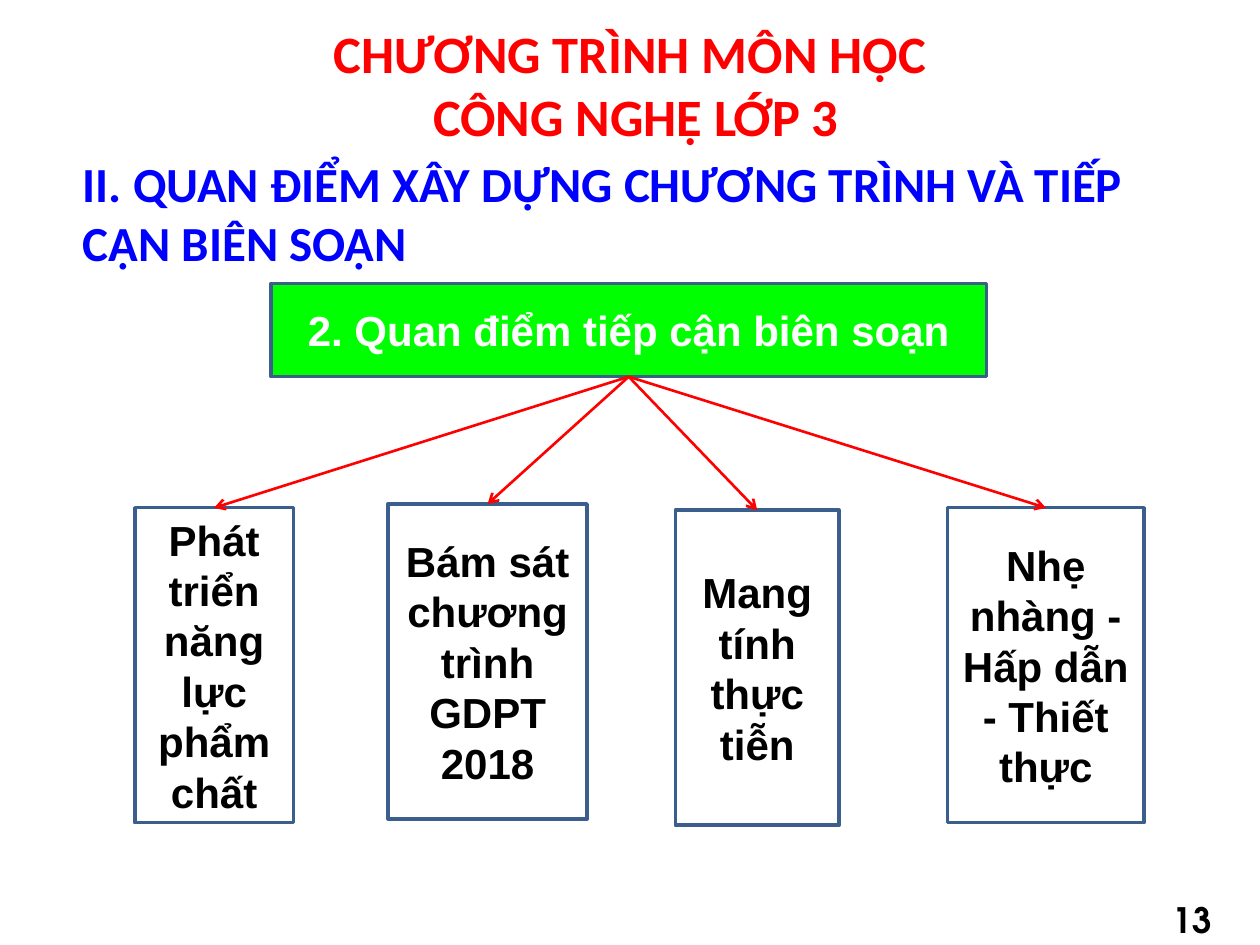
from lxml.etree import SubElement
from pptx import Presentation
from pptx.dml.color import RGBColor
from pptx.enum.shapes import MSO_CONNECTOR, MSO_SHAPE
from pptx.enum.text import MSO_ANCHOR, MSO_AUTO_SIZE, PP_ALIGN
from pptx.oxml.ns import qn
from pptx.util import Inches, Pt

BORDER, RED, BLUE, GREEN = "3A5F8C", "FF0000", "0000FF", "00FF00"
BLACK, WHITE = "000000", "FFFFFF"
WIDTH, HEIGHT = 10, 7.5
TOP, BOTTOM = 2, 0
BRANCHES = [
    ("Phát triển năng lực phẩm chất", 1.07, 4.03, 1.26),
    ("Bám sát chương trình GDPT 2018", 3.08, 4, 1.58),
    ("Mang tính thực tiễn", 5.36, 4.05, 1.3),
    ("Nhẹ nhàng - Hấp dẫn - Thiết thực", 7.52, 4.03, 1.56),
]


def rgb(color):
    """Turn a hex string into a colour."""
    return RGBColor.from_string(color)


def write(sp, lines, size, color, font, align=PP_ALIGN.CENTER, anchor=MSO_ANCHOR.MIDDLE):
    """Write bold lines into one paragraph of a shape."""
    tf = sp.text_frame
    tf.word_wrap = True
    tf.auto_size = MSO_AUTO_SIZE.NONE
    tf.vertical_anchor = anchor
    p = tf.paragraphs[0]
    p.alignment = align
    for i, line in enumerate(lines):
        if i:
            p.add_line_break()
        r = p.add_run()
        r.text = line
        r.font.name, r.font.size, r.font.bold = font, Pt(size), True
        r.font.color.rgb = rgb(color)


def add_title(s, lines):
    """Place and fill the title placeholder."""
    sp = s.shapes.title
    sp.left, sp.top = Inches(WIDTH * 0.05), Inches(0.04)
    sp.width, sp.height = Inches(WIDTH * 0.9), Inches(1.25)
    write(sp, lines, 30, RED, "Calibri")


def add_label(s, text, box, *style):
    """Add a text box with one styled line of text."""
    sp = s.shapes.add_textbox(*map(Inches, box))
    write(sp, [text], *style)


def add_box(s, text, box, fill, color):
    """Add a bordered rectangle with centred text."""
    sp = s.shapes.add_shape(MSO_SHAPE.RECTANGLE, *map(Inches, box))
    sp.shadow.inherit = False
    sp.fill.solid()
    sp.fill.fore_color.rgb = rgb(fill)
    sp.line.color.rgb = rgb(BORDER)
    sp.line.width = Pt(2)
    write(sp, [text], 24, color, "Arial")
    return sp


def add_arrow(s, parent, child):
    """Join the bottom of the parent to the top of the child."""
    c = s.shapes.add_connector(MSO_CONNECTOR.STRAIGHT, 0, 0, 0, 0)
    c.begin_connect(parent, TOP)
    c.end_connect(child, BOTTOM)
    c.line.color.rgb = rgb(RED)
    c.line.width = Pt(1.5)
    SubElement(c.line._get_or_add_ln(), qn("a:tailEnd"), type="arrow")
    SubElement(c._element.spPr, qn("a:effectLst"))


def main():
    """Build the slide and save it."""
    prs = Presentation()
    prs.slide_width, prs.slide_height = Inches(WIDTH), Inches(HEIGHT)
    s = prs.slides.add_slide(prs.slide_layouts[5])
    add_title(s, ["CHƯƠNG TRÌNH MÔN HỌC", " CÔNG NGHỆ LỚP 3"])
    add_label(s, "II. QUAN ĐIỂM XÂY DỰNG CHƯƠNG TRÌNH VÀ TIẾP CẬN BIÊN SOẠN",
              (0.56, 1.17, 8.99, 1.04), 28, BLUE, "Calibri", PP_ALIGN.LEFT, MSO_ANCHOR.TOP)
    root = add_box(s, "2. Quan điểm tiếp cận biên soạn", (2.15, 2.25, 5.68, 0.74), GREEN, WHITE)
    children = [add_box(s, text, (left, top, width, HEIGHT / 3), WHITE, BLACK)
                for text, left, top, width in BRANCHES]
    for child in children:
        add_arrow(s, root, child)
    add_label(s, "13", (9.08, 7.09, 0.77, 0.41), 20, BLACK, "TeX Gyre Adventor")
    prs.save("out.pptx")


if __name__ == "__main__":
    main()
